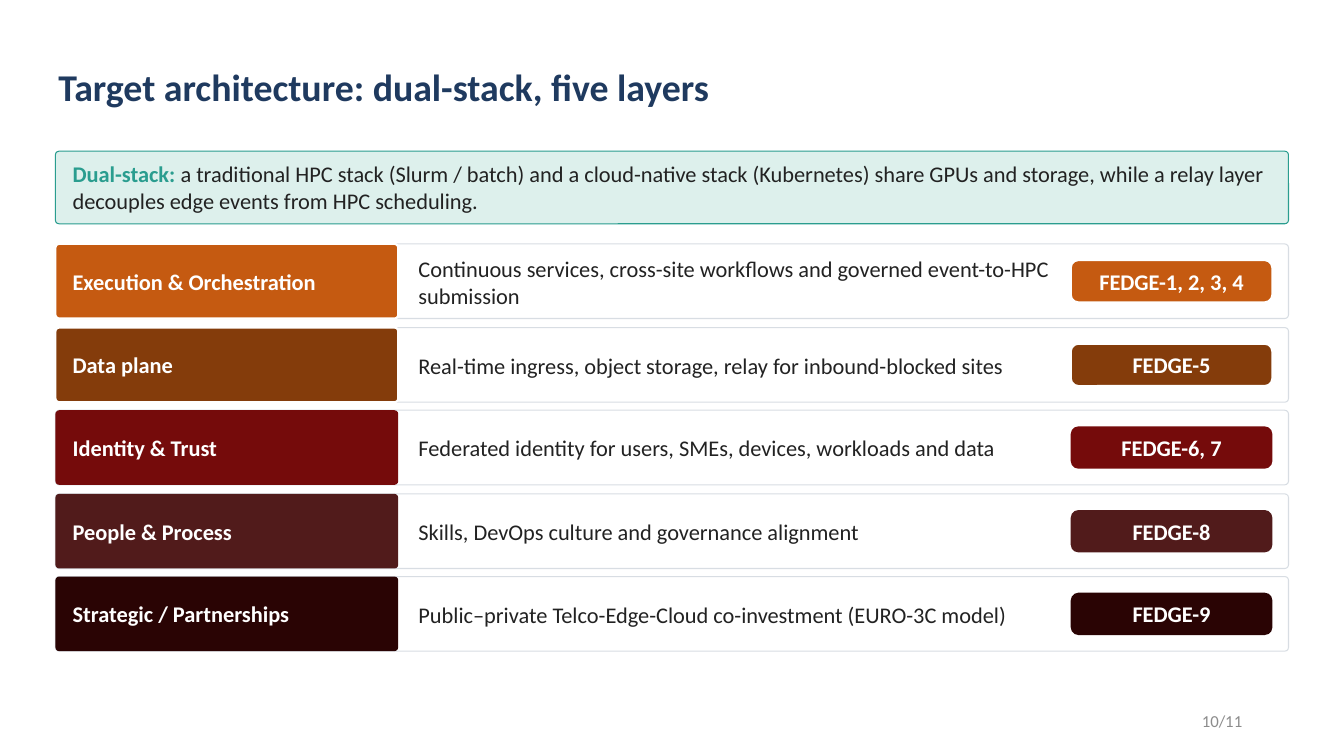
from pptx import Presentation
from pptx import util as u
from pptx.dml.color import RGBColor
from pptx.enum import shapes, text

PX = 9144  # EMU per px, 100 px to the inch
COLORS = {
    "title": "1F3A5F", "body": "222222", "white": "FFFFFF", "page": "8C8C8C",
    "teal": "2A9D8F", "mint": "DDF0EC", "border": "D8DDE3",
}
LEFT, WIDTH = 55, 1223
ROW_TOP, ROW_HEIGHT, LABEL_WIDTH = 242, 74, 340

# Layer, its colour, outline width of its coloured boxes, description, tag
LAYERS = [
    ("Execution & Orchestration", "C55A11", 1.5,
     "Continuous services, cross-site workflows and governed event-to-HPC submission",
     "FEDGE-1, 2, 3, 4"),
    ("Data plane", "843C0B", 1.5,
     "Real-time ingress, object storage, relay for inbound-blocked sites", "FEDGE-5"),
    ("Identity & Trust", "750B0B", 0,
     "Federated identity for users, SMEs, devices, workloads and data", "FEDGE-6, 7"),
    ("People & Process", "511B1B", 0,
     "Skills, DevOps culture and governance alignment", "FEDGE-8"),
    ("Strategic / Partnerships", "2A0404", 0,
     "Public–private Telco-Edge-Cloud co-investment (EURO-3C model)", "FEDGE-9"),
]


def add_box(place, radius, fill, line, line_width):
    shape = slide.shapes.add_shape(
        shapes.MSO_SHAPE.ROUNDED_RECTANGLE, *(n * PX for n in place))
    shape.adjustments[0] = radius
    shape.shadow.inherit = False
    shape.fill.solid()
    shape.fill.fore_color.rgb = RGBColor.from_string(fill)
    if line_width:
        shape.line.color.rgb = RGBColor.from_string(line)
        shape.line.width = u.Pt(line_width)
    else:
        shape.line.fill.background()
    return shape


def write(shape, words, size, color, bold=False, margins=(3, 1, 3, 1),
          align=text.PP_ALIGN.LEFT, anchor=text.MSO_ANCHOR.MIDDLE, after=0):
    frame = shape.text_frame
    frame.word_wrap = True
    frame.vertical_anchor = anchor
    frame.margin_left, frame.margin_top, frame.margin_right, frame.margin_bottom = (
        n * PX for n in margins)
    paragraph = frame.paragraphs[0]
    paragraph.text = words
    paragraph.alignment = align
    paragraph.space_after = u.Pt(after)
    paragraph.font.name = "Calibri"
    paragraph.font.size = u.Pt(size)
    paragraph.font.bold = bold
    paragraph.font.color.rgb = RGBColor.from_string(color)
    return paragraph


presentation = Presentation()
presentation.slide_width = 1333 * PX
presentation.slide_height = 750 * PX
slide = presentation.slides.add_slide(presentation.slide_layouts[5])

# Title
title = slide.shapes.title
title.left, title.top, title.width, title.height = (n * PX for n in (LEFT, 62, 1220, 85))
write(title, "Target architecture: dual-stack, five layers", 27, COLORS["title"], True,
      anchor=text.MSO_ANCHOR.TOP)

# Dual-stack summary
summary = add_box((LEFT, 150, WIDTH, 72), 0.05, COLORS["mint"], COLORS["teal"], 0.75)
paragraph = write(summary, "", 16, COLORS["body"], margins=(16, 4, 8, 4), after=2)
lead = paragraph.add_run()
lead.text = "Dual-stack: "
lead.font.bold = True
lead.font.color.rgb = RGBColor.from_string(COLORS["teal"])
paragraph.add_run().text = (
    "a traditional HPC stack (Slurm / batch) and a cloud-native stack (Kubernetes) share "
    "GPUs and storage, while a relay layer decouples edge events from HPC scheduling.")

# Five layers
for index, (name, color, outline, description, tag) in enumerate(LAYERS):
    top = ROW_TOP + (index * 165 + 1) // 2
    add_box((LEFT, top, WIDTH, ROW_HEIGHT), 0.05, COLORS["white"], COLORS["border"], 0.75)
    label = add_box((LEFT, top, LABEL_WIDTH, ROW_HEIGHT), 0.05, color, COLORS["white"], outline)
    write(label, name, 16, COLORS["white"], True, margins=(16, 4, 8, 4), after=2)
    detail = slide.shapes.add_textbox(*(n * PX for n in (412, top + 9, 635, 57)))
    write(detail, description, 16, COLORS["body"])
    badge = add_box((1062, top + 16, 200, 42), 0.18, color, COLORS["white"], outline)
    write(badge, tag, 16, COLORS["white"], True, margins=(8, 4, 8, 4),
          align=text.PP_ALIGN.CENTER, after=2)

# Page number
page = slide.shapes.add_textbox(*(n * PX for n in (942, 695, 300, 40)))
write(page, "10/11", 12, COLORS["page"], margins=(10, 5, 10, 5), align=text.PP_ALIGN.RIGHT)

presentation.save("out.pptx")
